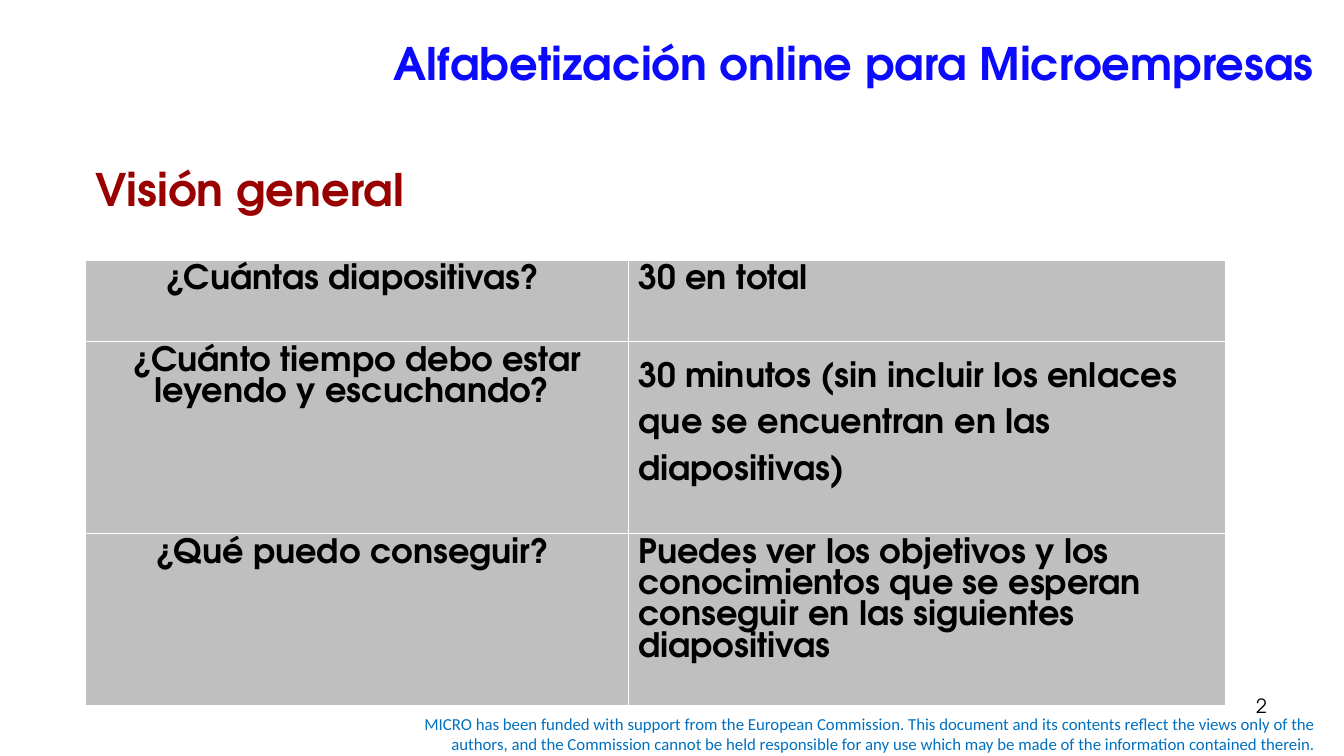
from lxml.etree import SubElement
from pptx import Presentation
from pptx.dml.color import RGBColor
from pptx.enum.text import MSO_ANCHOR as Anchor, PP_ALIGN as Align
from pptx.oxml.ns import qn
from pptx.util import Cm, Pt

BLUE = RGBColor(0x0B, 0x0A, 0xFD)
RED = RGBColor(0x99, 0x00, 0x00)
SKY = RGBColor(0x00, 0x70, 0xC0)
BLACK = RGBColor(0x00, 0x00, 0x00)
GREY = RGBColor(0xBF, 0xBF, 0xBF)
WHITE = RGBColor(0xFF, 0xFF, 0xFF)
ADVENTOR = "TeX Gyre Adventor"

FUNDING = (
    "MICRO has been funded with support from the European Commission. "
    "This document and its contents reflect the views only of the authors, "
    "and the Commission cannot be held responsible for any use which may be "
    "made of the information contained therein."
)
LABELS = [
    (FUNDING, (9.53, 17.86, 23.88, 1.27), 12, "Calibri", SKY, False, Align.RIGHT, Anchor.MIDDLE),
    ("2", (24.28, 17.35, 7.9, 1.32), 14, ADVENTOR, BLACK, False, Align.RIGHT, Anchor.TOP),
    ("Visión general", (2.16, 3.96, 9.58, 1.63), 32, ADVENTOR, RED, True, Align.LEFT, Anchor.TOP),
    ("Alfabetización online para Microempresas", (2.9, 0, 30.48, 3.18), 32, ADVENTOR, BLUE, True,
     Align.RIGHT, Anchor.MIDDLE),
]
OVERVIEW = [
    ("¿Cuántas diapositivas? ", "30 en total", 2.06, None),
    ("¿Cuánto tiempo debo estar leyendo y escuchando? ",
     "30 minutos (sin incluir los enlaces que se encuentran en las diapositivas)", 4.84, 1.5),
    ("¿Qué puedo conseguir? ",
     "Puedes ver los objetivos y los conocimientos que se esperan conseguir en las siguientes diapositivas",
     4.32, None),
]
COLUMN_WIDTHS = (13.67, 15.06)


def write(frame, text, size, font, color, bold, align):
    paragraph = frame.paragraphs[0]
    paragraph.alignment = align
    run = paragraph.add_run()
    run.text = text
    run.font.size = Pt(size)
    run.font.name = font
    run.font.bold = bold
    run.font.color.rgb = color
    return paragraph


def add_borders(cell):
    properties = cell._tc.get_or_add_tcPr()
    for index, side in enumerate(("a:lnL", "a:lnR", "a:lnT", "a:lnB")):
        line = properties.makeelement(qn(side), {"w": str(Pt(1))})
        fill = SubElement(line, qn("a:solidFill"))
        SubElement(fill, qn("a:srgbClr"), val=str(WHITE))
        properties.insert(index, line)


def add_label(slide, text, box, size, font, color, bold, align, anchor):
    frame = slide.shapes.add_textbox(*map(Cm, box)).text_frame
    frame.word_wrap = True
    frame.vertical_anchor = anchor
    write(frame, text, size, font, color, bold, align)


def add_overview(slide):
    height = sum(row[2] for row in OVERVIEW)
    table = slide.shapes.add_table(
        len(OVERVIEW), len(COLUMN_WIDTHS),
        Cm(2.16), Cm(6.55), Cm(sum(COLUMN_WIDTHS)), Cm(height),
    ).table
    for column, width in zip(table.columns, COLUMN_WIDTHS):
        column.width = Cm(width)
    for r, (question, answer, row_height, spacing) in enumerate(OVERVIEW):
        table.rows[r].height = Cm(row_height)
        for c, (text, align) in enumerate(((question, Align.CENTER), (answer, Align.LEFT))):
            cell = table.cell(r, c)
            cell.fill.solid()
            cell.fill.fore_color.rgb = GREY
            add_borders(cell)
            paragraph = write(cell.text_frame, text, 24, ADVENTOR, BLACK, True, align)
            if c == 1 and spacing:
                paragraph.line_spacing = spacing


def main():
    deck = Presentation()
    deck.slide_width, deck.slide_height = Cm(33.87), Cm(19.05)
    slide = deck.slides.add_slide(deck.slide_layouts[6])
    add_overview(slide)
    for label in LABELS:
        add_label(slide, *label)
    deck.save("out.pptx")


if __name__ == "__main__":
    main()
